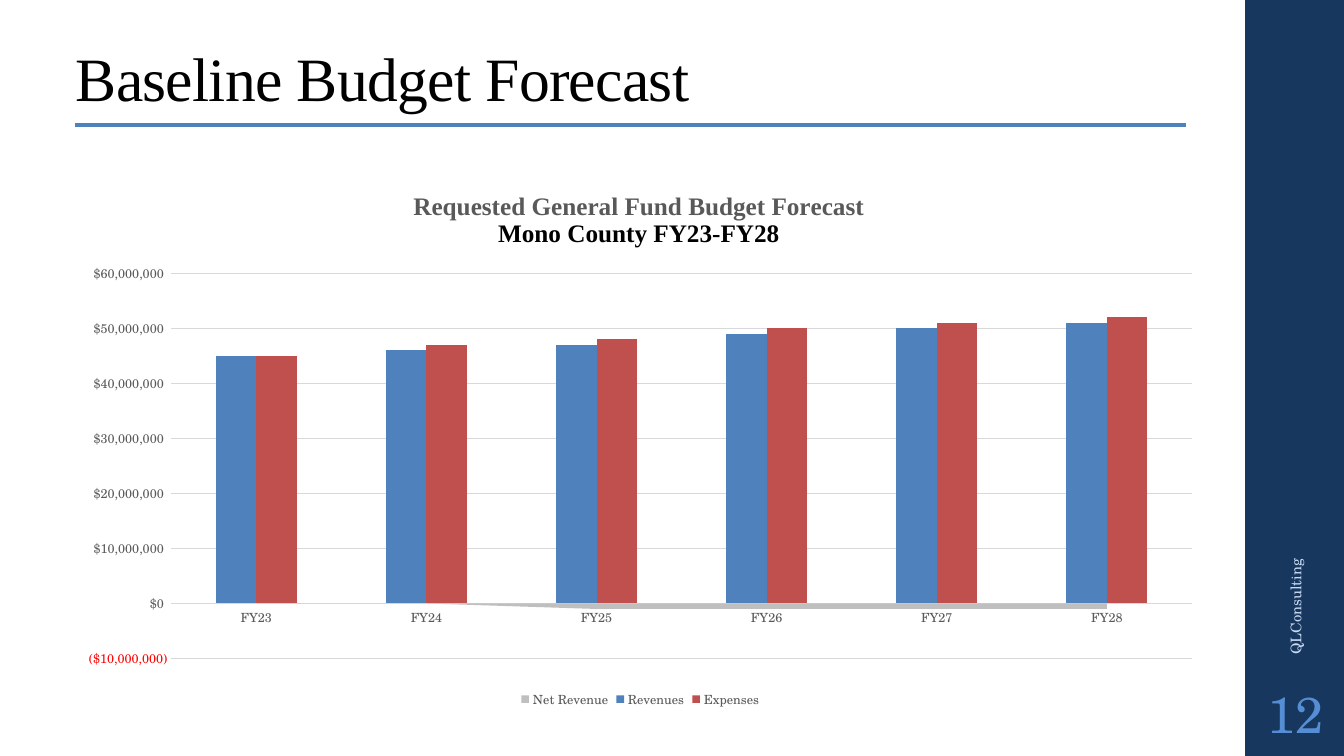
from lxml.etree import SubElement
from pptx import Presentation
from pptx.chart.data import CategoryChartData
from pptx.dml.color import RGBColor
from pptx.enum.chart import XL_CHART_TYPE as ChartType
from pptx.enum.chart import XL_LEGEND_POSITION as LegendPosition
from pptx.enum.chart import XL_TICK_MARK as TickMark
from pptx.enum.shapes import MSO_CONNECTOR as Connector
from pptx.enum.shapes import MSO_SHAPE as Shape
from pptx.enum.text import MSO_ANCHOR as Anchor
from pptx.enum.text import MSO_AUTO_SIZE as AutoSize
from pptx.enum.text import PP_ALIGN as Align
from pptx.oxml import parse_xml
from pptx.oxml.ns import nsdecls, qn
from pptx.util import Inches, Pt

NAVY = RGBColor(0x17, 0x37, 0x5E)
BLUE = RGBColor(0x4F, 0x81, 0xBD)
RED = RGBColor(0xC0, 0x50, 0x4D)
SILVER = RGBColor(0xBF, 0xBF, 0xBF)
GRID = RGBColor(0xD9, 0xD9, 0xD9)
GRAY = RGBColor(0x59, 0x59, 0x59)
BLACK = RGBColor(0, 0, 0)
PALE_BLUE = RGBColor(0xC6, 0xD9, 0xF1)
NUMBER_BLUE = RGBColor(0x55, 0x8E, 0xD5)

YEARS = [f"FY{year}" for year in range(23, 29)]
MILLIONS = {
    "Net Revenue": (SILVER, [0, 0, -1, -1, -1, -1]),
    "Revenues": (BLUE, [45, 46, 47, 49, 50, 51]),
    "Expenses": (RED, [45, 47, 48, 50, 51, 52]),
}
CURRENCY = '"$"#,##0_);[Red]\\("$"#,##0\\)'


def apply(target, values):
    for name, value in values.items():
        setattr(target, name, value)


class SlideBuilder:
    heading_font = "Times New Roman"
    body_font = "TeX Gyre Schola"

    def __init__(self, presentation):
        self.slide = presentation.slides.add_slide(presentation.slide_layouts[5])

    def style_font(self, font, size, color, name=None, bold=False):
        apply(font, {"size": Pt(size), "name": name or self.body_font, "bold": bold})
        font.color.rgb = color

    def title(self, text, left, top, width, height):
        shape = self.slide.shapes.title
        apply(shape, {"left": Inches(left), "top": Inches(top),
                      "width": Inches(width), "height": Inches(height)})
        apply(shape.text_frame, {"text": text, "word_wrap": True,
                                 "auto_size": AutoSize.NONE,
                                 "vertical_anchor": Anchor.MIDDLE})
        paragraph = shape.text_frame.paragraphs[0]
        apply(paragraph, {"alignment": Align.LEFT, "line_spacing": 0.9,
                          "space_after": Pt(12)})
        font = paragraph.runs[0].font
        self.style_font(font, 44, BLACK, self.heading_font)
        paragraph.runs[0]._r.get_or_add_rPr().set("spc", "-50")

    def band(self, left, top, width, height, color):
        shape = self.slide.shapes.add_shape(
            Shape.RECTANGLE, Inches(left), Inches(top), Inches(width), Inches(height))
        shape.shadow.inherit = False
        shape.fill.solid()
        shape.fill.fore_color.rgb = color
        shape.line.fill.background()

    def rule(self, left, right, top, color, weight):
        line = self.slide.shapes.add_connector(
            Connector.STRAIGHT, Inches(left), Inches(top), Inches(right), Inches(top))
        line.line.color.rgb = color
        line.line.width = Pt(weight)
        SubElement(line._element.spPr, qn("a:effectLst"))

    def text(self, text, box, size, color, align=Align.LEFT, rotation=0, inset=0.1):
        shape = self.slide.shapes.add_textbox(*map(Inches, box))
        shape.rotation = rotation
        apply(shape.text_frame, {"text": text, "word_wrap": True,
                                 "vertical_anchor": Anchor.MIDDLE,
                                 "margin_left": Inches(inset),
                                 "margin_right": Inches(inset)})
        paragraph = shape.text_frame.paragraphs[0]
        paragraph.alignment = align
        self.style_font(paragraph.runs[0].font, size, color)

    def place(self, parent, position, **fractions):
        for layout in parent.findall(qn("c:layout")):
            parent.remove(layout)
        target = '<c:layoutTarget val="inner"/>' if "w" in fractions else ""
        modes = "".join(f'<c:{key}Mode val="edge"/>' for key in "xy")
        sizes = "".join(f'<c:{key} val="{value}"/>' for key, value in fractions.items())
        parent.insert(position, parse_xml(
            f'<c:layout {nsdecls("c")}><c:manualLayout>{target}{modes}{sizes}'
            "</c:manualLayout></c:layout>"))

    def move_to_area(self, chart):
        bars = chart._chartSpace.find(".//" + qn("c:barChart"))
        area = parse_xml(f'<c:areaChart {nsdecls("c")}><c:grouping val="standard"/>'
                         '<c:varyColors val="0"/></c:areaChart>')
        series = bars.find(qn("c:ser"))
        for flag in series.findall(qn("c:invertIfNegative")):
            series.remove(flag)
        area.append(series)
        for axis in bars.findall(qn("c:axId")):
            SubElement(area, qn("c:axId")).set("val", axis.get("val"))
        bars.addprevious(area)

    def center_categories(self, axis):
        for setting in axis.findall(qn("c:crossBetween")):
            axis.remove(setting)
        axis.find(qn("c:crosses")).addnext(
            parse_xml(f'<c:crossBetween {nsdecls("c")} val="between"/>'))

    def chart_title(self, chart, lines):
        frame = chart.chart_title.text_frame
        for index, (text, color) in enumerate(lines):
            paragraph = frame.add_paragraph() if index else frame.paragraphs[0]
            paragraph.alignment = Align.CENTER
            run = paragraph.add_run()
            run.text = text
            self.style_font(run.font, 18, color, self.heading_font, True)
        self.place(chart.chart_title._element, 1, x=0.3, y=0.03)

    def forecast_chart(self, left, top, width, height, title_lines):
        data = CategoryChartData(number_format=CURRENCY)
        data.categories = YEARS
        for name, (_, values) in MILLIONS.items():
            data.add_series(name, [value * 1_000_000 for value in values])
        chart = self.slide.shapes.add_chart(
            ChartType.COLUMN_CLUSTERED, Inches(left), Inches(top),
            Inches(width), Inches(height), data).chart
        self.style_font(chart.font, 10, BLACK)
        plot = chart.plots[0]
        apply(plot, {"gap_width": 219, "overlap": 0, "vary_by_categories": False})
        for series in plot.series:
            series.format.fill.solid()
            series.format.fill.fore_color.rgb = MILLIONS[series.name][0]
        self.move_to_area(chart)
        for axis in (chart.category_axis, chart.value_axis):
            apply(axis, {"major_tick_mark": TickMark.NONE,
                         "minor_tick_mark": TickMark.NONE})
            self.style_font(axis.tick_labels.font, 9, GRAY)
        values = chart.value_axis
        apply(values, {"minimum_scale": -10_000_000, "maximum_scale": 60_000_000,
                       "major_unit": 10_000_000, "has_major_gridlines": True})
        apply(values.tick_labels, {"number_format": CURRENCY,
                                   "number_format_is_linked": False})
        values.format.line.fill.background()
        self.center_categories(values._element)
        for line in (chart.category_axis.format.line, values.major_gridlines.format.line):
            line.color.rgb = GRID
            line.width = Pt(0.75)
        chart.has_legend = True
        apply(chart.legend, {"position": LegendPosition.BOTTOM,
                             "include_in_layout": False})
        self.style_font(chart.legend.font, 9, GRAY)
        self.chart_title(chart, title_lines)
        plot_area = chart._chartSpace.find(".//" + qn("c:plotArea"))
        self.place(plot_area, 0, x=0.092, y=0.187, w=0.888, h=0.713)


def main():
    presentation = Presentation()
    apply(presentation, {"slide_width": Inches(13.33), "slide_height": Inches(7.5)})
    builder = SlideBuilder(presentation)
    builder.band(12.35, 0, 1, 7.5, NAVY)
    builder.rule(0.74, 11.76, 1.24, BLUE, 2.25)
    builder.title("Baseline Budget Forecast", 0.65, 0.25, 11.4, 1.11)
    builder.text("QLConsulting", (10.89, 4.43, 3.92, 0.4), 10.5, PALE_BLUE, rotation=270)
    builder.text("12", (12.35, 6.75, 1, 0.65), 36, NUMBER_BLUE, Align.CENTER, inset=0.05)
    builder.forecast_chart(0.65, 1.71, 11.4, 5.36, [
        ("Requested General Fund Budget Forecast", GRAY),
        ("Mono County FY23-FY28", BLACK),
    ])
    presentation.save("out.pptx")


if __name__ == "__main__":
    main()
